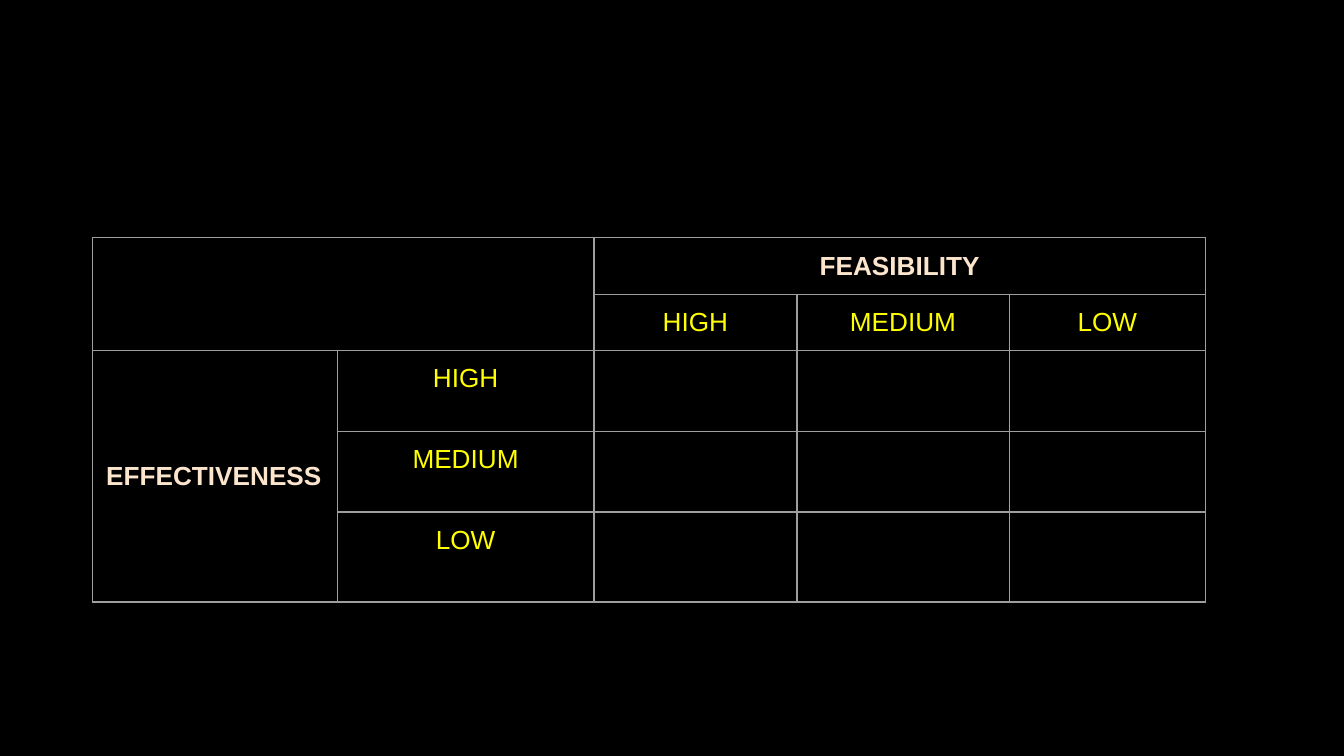
"""Builds a slide with an effectiveness and feasibility grid."""
from lxml.etree import SubElement
from pptx import Presentation
from pptx.dml.color import RGBColor
from pptx.enum.text import MSO_ANCHOR, PP_ALIGN
from pptx.oxml.ns import qn
from pptx.util import Inches, Pt

THEME = {
    "font": "Arial", "size": 14, "bg": "000000", "heading": "FCE5CD",
    "level": "FFFF00", "border": "9E9E9E", "border_pt": 0.75,
}
WIDTH = 10
HEIGHT = WIDTH * 9 / 16
LEVELS = ["HIGH", "MEDIUM", "LOW"]
COLS = [1.82, 1.91, 1.51, 1.58, 1.46]
ROWS = [0.42, 0.42, 0.6, 0.6, 0.67]
LEFT, TOP, MARGIN = 0.69, 1.77, 0.1
MERGES = [((0, 0), (1, 1)), ((0, 2), (0, 4)), ((2, 0), (4, 0))]

HEADINGS = {(0, 2): "FEASIBILITY", (2, 0): "EFFECTIVENESS"}
LABELS = {}
for i, level in enumerate(LEVELS, start=2):
    LABELS[1, i] = LABELS[i, 1] = level


def add_borders(cell):
    """Draw a thin line on all four sides of a cell."""
    tc_pr = cell._tc.get_or_add_tcPr()
    for side in ("lnL", "lnR", "lnT", "lnB"):
        ln = SubElement(tc_pr, qn(f"a:{side}"), w=str(Pt(THEME["border_pt"])))
        fill = SubElement(ln, qn("a:solidFill"))
        SubElement(fill, qn("a:srgbClr"), val=THEME["border"])


def format_cell(cell, text, is_heading):
    """Style a cell and write its text."""
    add_borders(cell)
    cell.fill.background()
    cell.margin_left = cell.margin_right = Inches(MARGIN)
    cell.margin_top = cell.margin_bottom = Inches(MARGIN)
    cell.text = text
    p = cell.text_frame.paragraphs[0]
    p.alignment = PP_ALIGN.CENTER
    p.font.name = THEME["font"]
    p.font.size = Pt(THEME["size"])
    p.font.bold = is_heading
    color = THEME["heading" if is_heading else "level"]
    p.font.color.rgb = RGBColor.from_string(color)


def main():
    """Build and save the slide."""
    prs = Presentation()
    prs.slide_width, prs.slide_height = Inches(WIDTH), Inches(HEIGHT)
    s = prs.slides.add_slide(prs.slide_layouts[6])
    s.background.fill.solid()
    s.background.fill.fore_color.rgb = RGBColor.from_string(THEME["bg"])

    table = s.shapes.add_table(
        len(ROWS), len(COLS), Inches(LEFT), Inches(TOP),
        Inches(sum(COLS)), Inches(sum(ROWS))).table
    table.first_row = table.horz_banding = False
    for col, width in zip(table.columns, COLS):
        col.width = Inches(width)
    for row, height in zip(table.rows, ROWS):
        row.height = Inches(height)

    texts = HEADINGS | LABELS
    for r in range(len(ROWS)):
        for c in range(len(COLS)):
            format_cell(table.cell(r, c), texts.get((r, c), ""), (r, c) in HEADINGS)
    for start, end in MERGES:
        table.cell(*start).merge(table.cell(*end))

    side_heading = table.cell(2, 0)
    side_heading.vertical_anchor = MSO_ANCHOR.MIDDLE
    side_heading.text_frame.paragraphs[0].alignment = PP_ALIGN.LEFT
    prs.save("out.pptx")


if __name__ == "__main__":
    main()
